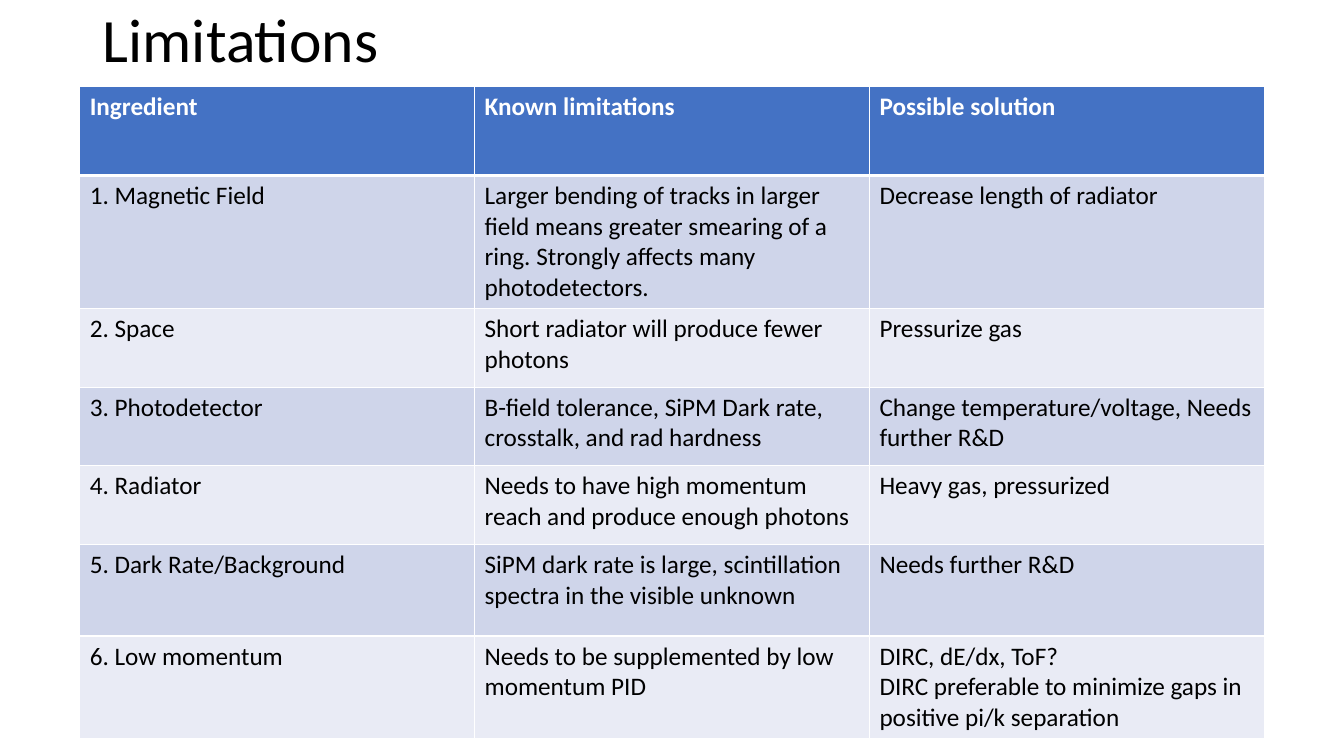
from lxml.etree import SubElement
from pptx import Presentation
from pptx.dml.color import RGBColor
from pptx.enum.text import MSO_ANCHOR, PP_ALIGN
from pptx.oxml.ns import qn
from pptx.util import Inches, Pt

FONT = "Calibri"
WHITE, BLACK, HEADER_BLUE = "FFFFFF", "000000", "4472C4"
BANDS = ["CFD5EA", "E9EBF5"]

COLUMN_WIDTH = 11.75 / 3
ROW_HEIGHTS = [0.88, 1.11, 0.78, 0.78, 0.78, 0.91, 0.91]

LIMITATIONS = [
    ("Ingredient", "Known limitations", "Possible solution"),
    ("1. Magnetic Field",
     "Larger bending of tracks in larger field means greater smearing of a ring. "
     "Strongly affects many photodetectors.",
     "Decrease length of radiator"),
    ("2. Space", "Short radiator will produce fewer photons", "Pressurize gas"),
    ("3. Photodetector",
     "B-field tolerance, SiPM Dark rate, crosstalk, and rad hardness",
     "Change temperature/voltage, Needs further R&D"),
    ("4. Radiator",
     "Needs to have high momentum reach and produce enough photons",
     "Heavy gas, pressurized"),
    ("5. Dark Rate/Background",
     "SiPM dark rate is large, scintillation spectra in the visible unknown",
     "Needs further R&D"),
    ("6. Low momentum",
     "Needs to be supplemented by low momentum PID",
     "DIRC, dE/dx, ToF?\vDIRC preferable to minimize gaps in positive pi/k separation"),
]


def rgb(hex_color):
    return RGBColor.from_string(hex_color)


def set_font(paragraph, size, color, bold=False):
    font = paragraph.font
    font.name, font.size, font.bold = FONT, Pt(size), bold
    font.color.rgb = rgb(color)


def add_title(slide, wording):
    title = slide.shapes.title
    title.left, title.top = Inches(0.92), Inches(-0.3)
    title.width, title.height = Inches(11.5), Inches(1.45)
    frame = title.text_frame
    frame.text = wording
    frame.vertical_anchor = MSO_ANCHOR.MIDDLE
    heading = frame.paragraphs[0]
    heading.alignment = PP_ALIGN.LEFT
    heading.line_spacing = 0.9
    set_font(heading, 44, BLACK)


def set_borders(cell, widths):
    properties = cell._tc.get_or_add_tcPr()
    for side, width in widths.items():
        border = SubElement(properties, qn(f"a:ln{side}"), w=str(Pt(width)))
        fill = SubElement(border, qn("a:solidFill"))
        SubElement(fill, qn("a:srgbClr"), val=WHITE)


def format_cell(cell, wording, row):
    is_header = row == 0
    # Borders precede the fill in the cell properties
    set_borders(cell, {"L": 1, "R": 1,
                       "T": 3 if row == 1 else 1,
                       "B": 3 if is_header else 1})
    cell.fill.solid()
    cell.fill.fore_color.rgb = rgb(HEADER_BLUE if is_header else BANDS[(row - 1) % 2])
    cell.text = wording
    for paragraph in cell.text_frame.paragraphs:
        set_font(paragraph, 18, WHITE if is_header else BLACK, is_header)


def add_limitations_table(slide):
    columns = len(LIMITATIONS[0])
    table = slide.shapes.add_table(
        len(LIMITATIONS), columns, Inches(0.79), Inches(0.86),
        Inches(COLUMN_WIDTH * columns), Inches(sum(ROW_HEIGHTS))).table
    for column in table.columns:
        column.width = Inches(COLUMN_WIDTH)
    for row, (height, wordings) in enumerate(zip(ROW_HEIGHTS, LIMITATIONS)):
        table.rows[row].height = Inches(height)
        for column, wording in enumerate(wordings):
            format_cell(table.cell(row, column), wording, row)


def main():
    presentation = Presentation()
    presentation.slide_width, presentation.slide_height = Inches(13.33), Inches(7.5)
    slide = presentation.slides.add_slide(presentation.slide_layouts[5])  # title only
    add_title(slide, "Limitations")
    add_limitations_table(slide)
    presentation.save("out.pptx")


if __name__ == "__main__":
    main()
